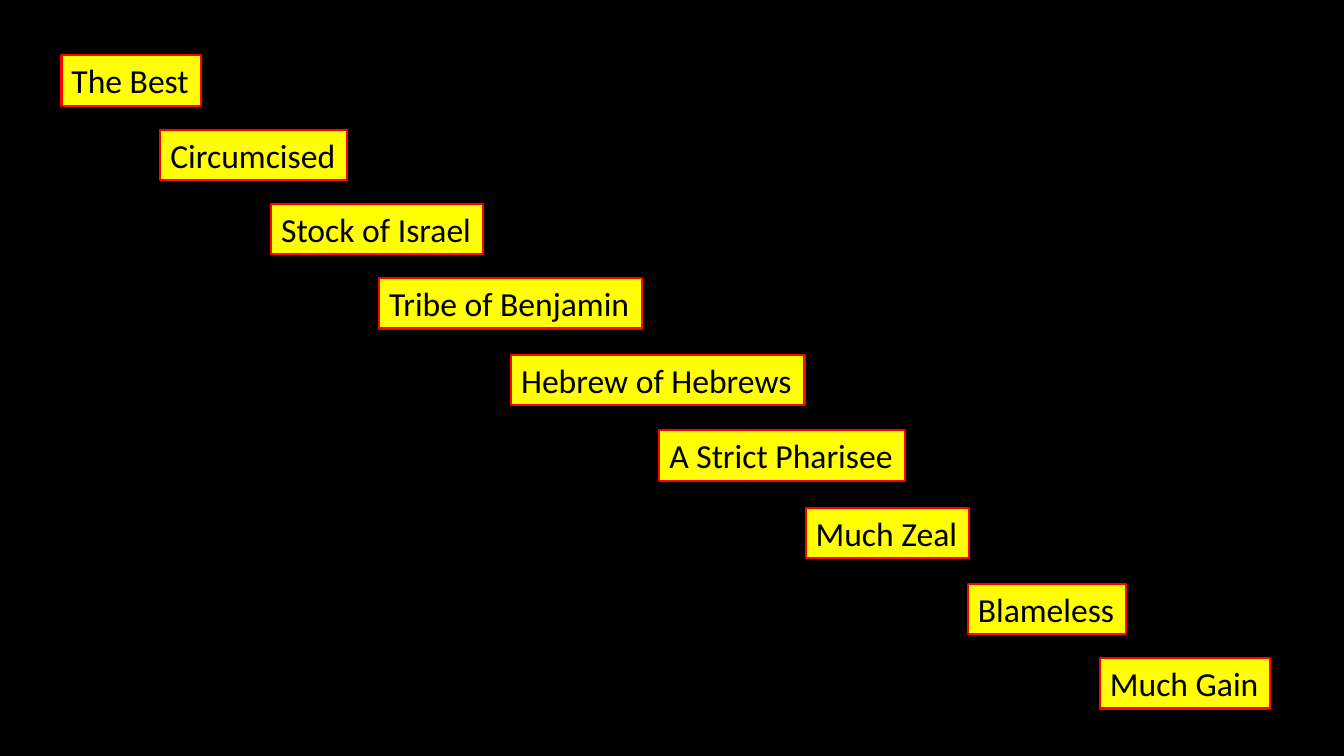
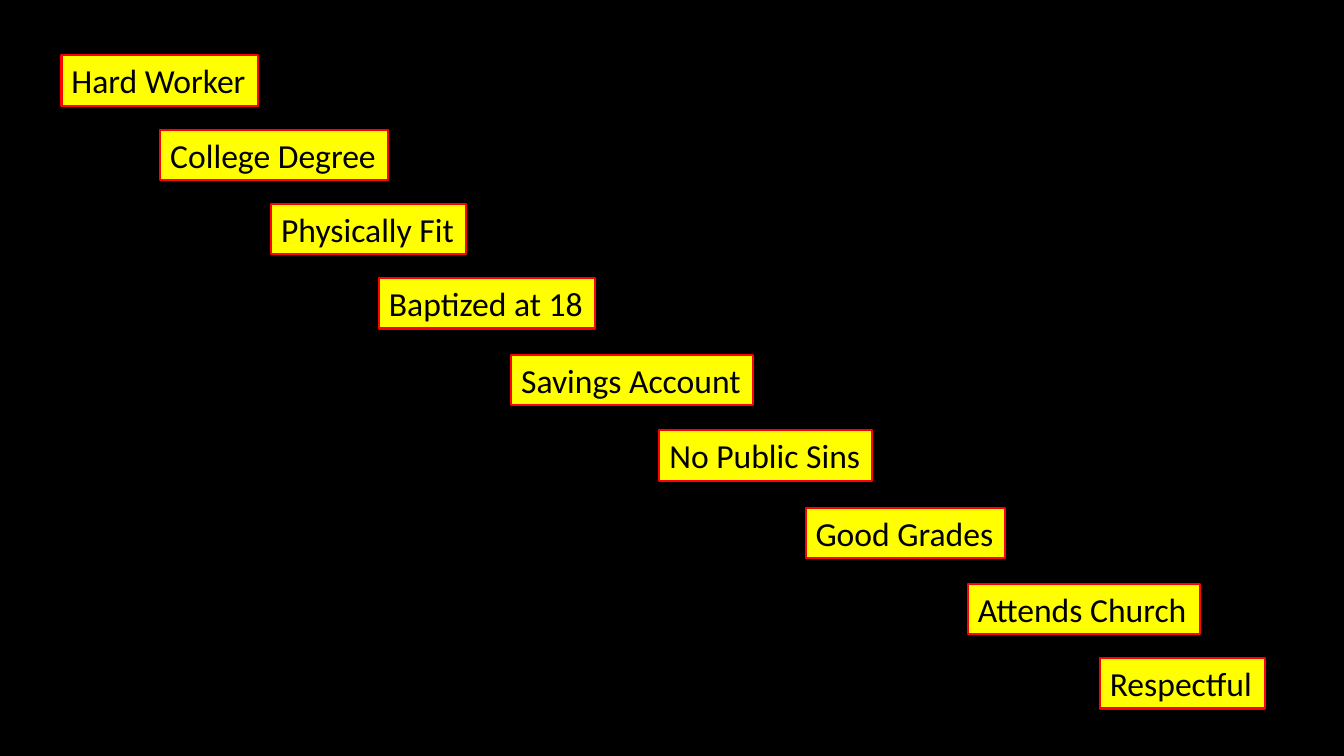
"""Build two slides of labels that step down from top left to bottom right."""
import pptx
import pptx.dml.color
import pptx.enum.text
import pptx.util

Inches = pptx.util.Inches
Pt = pptx.util.Pt

HUES = {"back": "000000", "fill": "FFFF00", "edge": "FF0000", "text": "000000"}
FONT = {"name": "Calibri", "size": Pt(24)}
FRAME = {
    "word_wrap": False,
    "auto_size": pptx.enum.text.MSO_AUTO_SIZE.SHAPE_TO_FIT_TEXT,
}
HIGH = 0.5

STEPS = [
    (0.61, 0.55), (1.59, 1.29), (2.69, 2.02),
    (3.76, 2.76), (5.07, 3.52), (6.54, 4.27),
    (7.99, 5.04), (9.6, 5.79), (10.91, 6.53),
]

SLIDES = [
    [
        ("The Best", 1.38),
        ("Circumcised", 1.85),
        ("Stock of Israel", 2.1),
        ("Tribe of Benjamin", 2.61),
        ("Hebrew of Hebrews", 2.91),
        ("A Strict Pharisee", 2.44),
        ("Much Zeal", 1.62),
        ("Blameless", 1.57),
        ("Much Gain", 1.69),
    ],
    [
        ("Hard Worker", 1.95),
        ("College Degree", 2.26),
        ("Physically Fit", 1.93),
        ("Baptized at 18", 2.14),
        ("Savings Account", 2.4),
        ("No Public Sins", 2.11),
        ("Good Grades", 1.98),
        ("Attends Church", 2.3),
        ("Respectful", 1.64),
    ],
]


def style(item, values):
    """Set each named attribute on the item."""
    for name, value in values.items():
        setattr(item, name, value)


def paint(fill, hue):
    """Give a fill one solid colour."""
    fill.solid()
    fill.fore_color.rgb = pptx.dml.color.RGBColor.from_string(HUES[hue])


def add_label(slide, text, left, top, width):
    """Add one outlined label."""
    box = slide.shapes.add_textbox(*map(Inches, (left, top, width, HIGH)))
    paint(box.fill, "fill")
    paint(box.line.fill, "edge")
    box.line.width = Pt(1.5)
    style(box.text_frame, FRAME)
    run = box.text_frame.paragraphs[0].add_run()
    run.text = text
    style(run.font, FONT)
    paint(run.font.fill, "text")


def main():
    """Build and save the deck."""
    deck = pptx.Presentation()
    style(deck, {"slide_width": Inches(13.33), "slide_height": Inches(7.5)})
    paint(deck.slide_master.background.fill, "back")
    for labels in SLIDES:
        slide = deck.slides.add_slide(deck.slide_layouts[6])
        for (text, width), (left, top) in zip(labels, STEPS):
            add_label(slide, text, left, top, width)
    deck.save("out.pptx")


if __name__ == "__main__":
    main()
